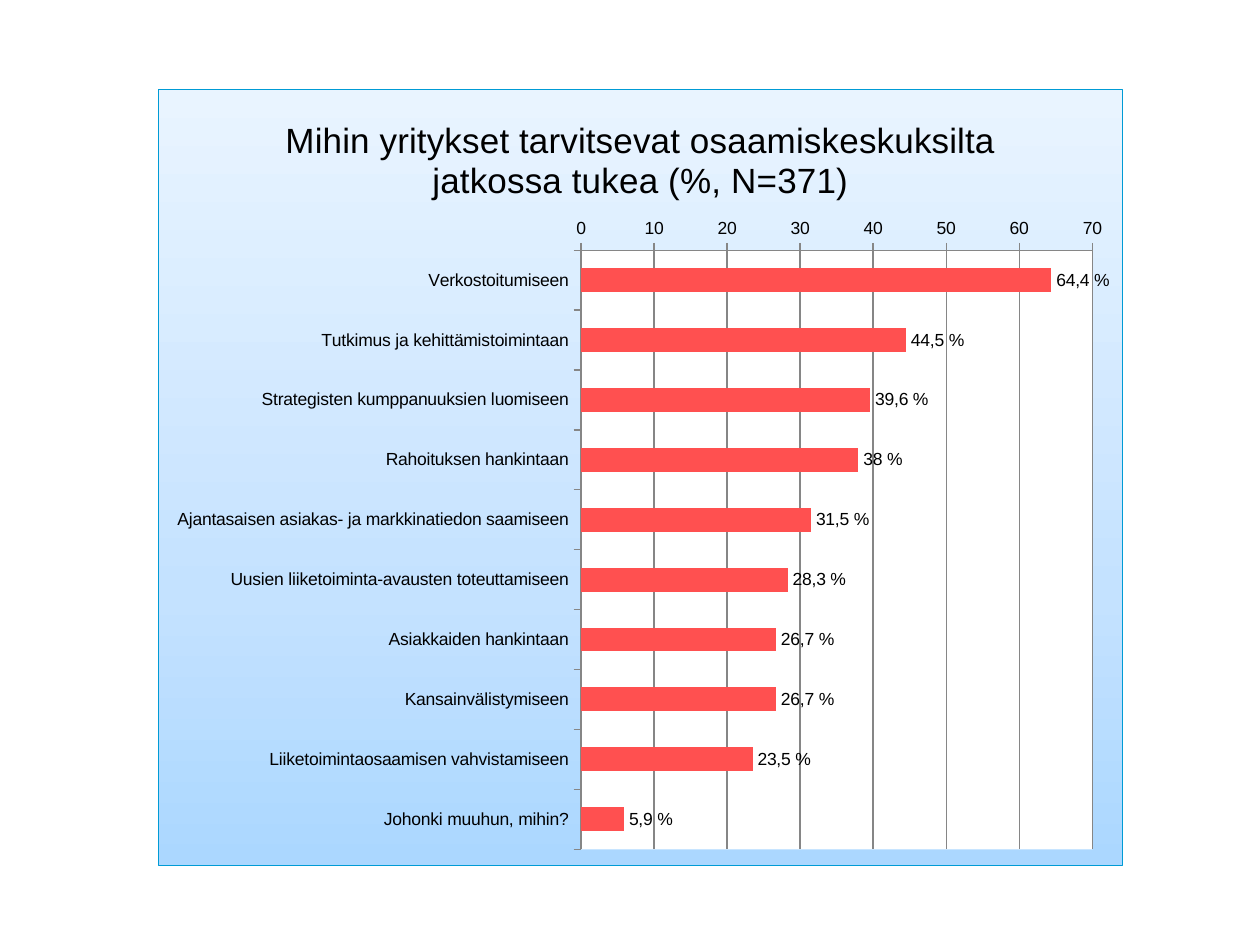
from dataclasses import dataclass

from lxml import etree
from pptx import Presentation
from pptx.chart.data import CategoryChartData
from pptx.dml.color import RGBColor
from pptx.enum.chart import XL_CHART_TYPE, XL_LABEL_POSITION, XL_TICK_MARK
from pptx.oxml import parse_xml
from pptx.oxml.ns import nsdecls, qn
from pptx.util import Pt

BAR = XL_CHART_TYPE.BAR_CLUSTERED
OUTSIDE_END = XL_LABEL_POSITION.OUTSIDE_END
TICK_OUT, TICK_NONE = XL_TICK_MARK.OUTSIDE, XL_TICK_MARK.NONE
EMU_PER_PX = 914400 / 126


@dataclass(frozen=True)
class Theme:
    font: str = "Arial"
    title_size: int = 20
    label_size: int = 10
    text: str = "000000"
    bar: str = "FF5050"
    axis: str = "868686"
    border: str = "009BD5"
    plot: str = "FFFFFF"
    gradient: tuple = ((0, "ABD7FF"), (35, "C4E2FF"), (100, "E9F4FF"))


THEME = Theme()
TITLE = "Mihin yritykset tarvitsevat osaamiskeskuksilta jatkossa tukea (%, N=371)"
SUPPORT_NEEDS = {
    "Verkostoitumiseen": 64.4,
    "Tutkimus ja kehittämistoimintaan": 44.5,
    "Strategisten kumppanuuksien luomiseen": 39.6,
    "Rahoituksen hankintaan": 38,
    "Ajantasaisen asiakas- ja markkinatiedon saamiseen": 31.5,
    "Uusien liiketoiminta-avausten toteuttamiseen": 28.3,
    "Asiakkaiden hankintaan": 26.7,
    "Kansainvälistymiseen": 26.7,
    "Liiketoimintaosaamisen vahvistamiseen": 23.5,
    "Johonki muuhun, mihin?": 5.9,
}


def px(n):
    return round(n * EMU_PER_PX)


def format_font(font, size=THEME.label_size, color=THEME.text, bold=False):
    font.name, font.size, font.bold = THEME.font, Pt(size), bold
    font.color.rgb = RGBColor.from_string(color)


def write_text(tf, text, **fmt):
    p = tf.paragraphs[0]
    r = p.add_run()
    r.text = text
    format_font(p.font, **fmt)
    format_font(r.font, **fmt)


def fill_chart_area(chart):
    stops = "".join(
        f'<a:gs pos="{pos * 1000}"><a:srgbClr val="{color}"/></a:gs>'
        for pos, color in THEME.gradient
    )
    chart_el = chart._chartSpace.find(qn("c:chart"))
    chart_el.addnext(parse_xml(
        f'<c:spPr {nsdecls("c", "a")}>'
        f'<a:gradFill><a:gsLst>{stops}</a:gsLst><a:lin ang="16200000" scaled="0"/></a:gradFill>'
        f'<a:ln w="9525"><a:solidFill><a:srgbClr val="{THEME.border}"/></a:solidFill></a:ln>'
        "</c:spPr>"
    ))


def place_plot(chart, box, plot_box):
    """Fill the plot and fix its inner area at plot_box, relative to the chart box."""
    plot_area = chart._chartSpace.find(qn("c:chart")).find(qn("c:plotArea"))
    for old in plot_area.findall(qn("c:layout")):
        plot_area.remove(old)
    layout = etree.Element(qn("c:layout"))
    manual = etree.SubElement(layout, qn("c:manualLayout"))
    shares = [round(n / box[2 + i % 2], 4) for i, n in enumerate(plot_box)]
    settings = [("layoutTarget", "inner"), ("xMode", "edge"), ("yMode", "edge")]
    for tag, value in settings + list(zip("xywh", shares)):
        etree.SubElement(manual, qn(f"c:{tag}")).set("val", str(value))
    plot_area.insert(0, layout)
    plot_area.append(parse_xml(
        f'<c:spPr {nsdecls("c", "a")}><a:solidFill>'
        f'<a:srgbClr val="{THEME.plot}"/></a:solidFill><a:ln><a:noFill/></a:ln></c:spPr>'
    ))


def format_line(line):
    line.color.rgb = RGBColor.from_string(THEME.axis)
    line.width = Pt(0.75)


def format_axes(chart):
    for axis in (chart.category_axis, chart.value_axis):
        axis.major_tick_mark, axis.minor_tick_mark = TICK_OUT, TICK_NONE
        format_line(axis.format.line)
        format_font(axis.tick_labels.font)
    chart.category_axis.reverse_order = True
    values = chart.value_axis
    values.minimum_scale, values.maximum_scale, values.major_unit = 0, 70, 10
    values.has_major_gridlines = True
    format_line(values.major_gridlines.format.line)


def format_bars(plot):
    plot.gap_width = 150
    plot.vary_by_categories = False
    series = plot.series[0]
    series.format.fill.solid()
    series.format.fill.fore_color.rgb = RGBColor.from_string(THEME.bar)
    labels = series.data_labels
    labels.show_value = True
    labels.position = OUTSIDE_END
    format_font(labels.font)
    for i, value in enumerate(series.values):
        label = series.points[i].data_label
        write_text(label.text_frame, f"{value:g} %".replace(".", ","))
        label.position = OUTSIDE_END


def add_support_chart(s, box):
    data = CategoryChartData()
    data.categories = list(SUPPORT_NEEDS)
    data.add_series("Series 1", list(SUPPORT_NEEDS.values()))
    chart = s.shapes.add_chart(BAR, *map(px, box), data).chart
    format_font(chart.font)
    chart.has_legend = False
    chart.has_title = True
    write_text(chart.chart_title.text_frame, TITLE, size=THEME.title_size)
    chart.chart_title.include_in_layout = False
    format_axes(chart)
    format_bars(chart.plots[0])
    fill_chart_area(chart)
    place_plot(chart, box, (423, 161, 512, 600))


def main():
    prs = Presentation()
    prs.slide_width, prs.slide_height = px(1260), px(945)
    s = prs.slides.add_slide(prs.slide_layouts[6])
    add_support_chart(s, (158, 89, 965, 777))
    prs.save("out.pptx")


if __name__ == "__main__":
    main()
